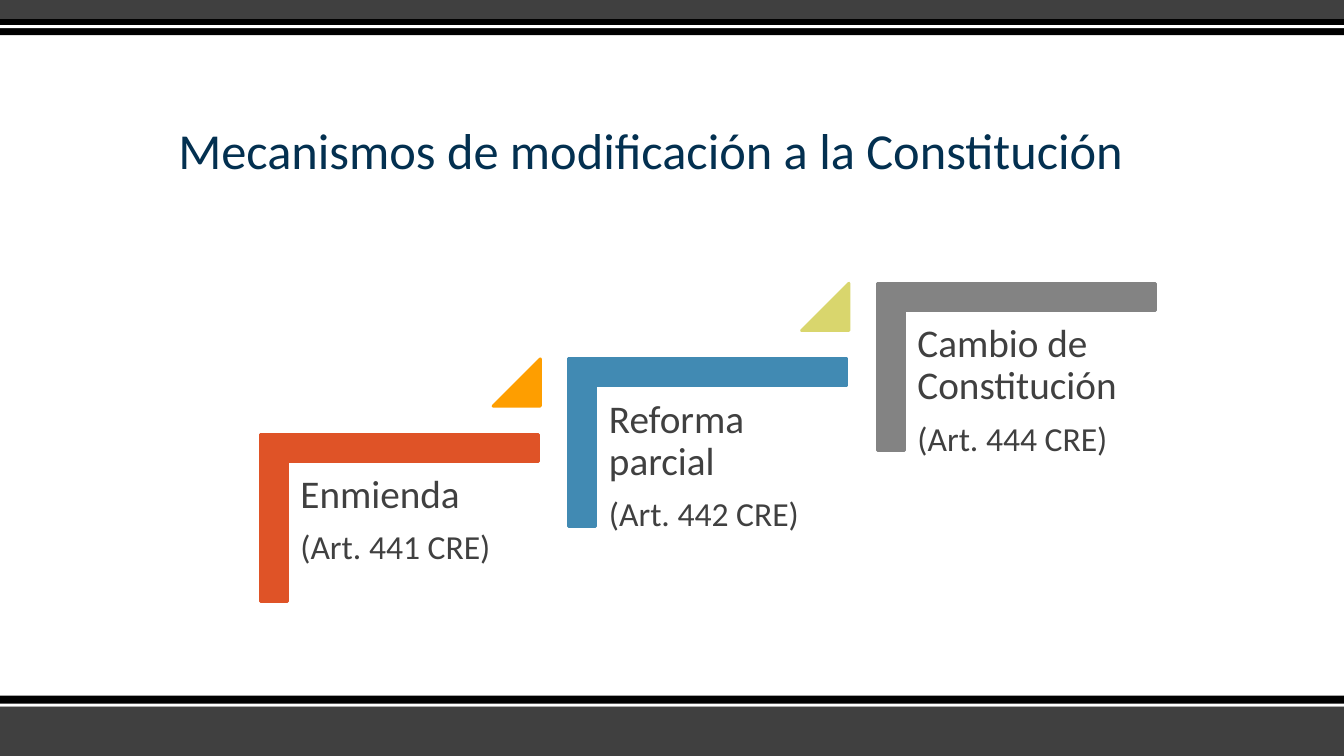
from pptx import Presentation
from pptx.dml.color import RGBColor
from pptx.enum.shapes import MSO_SHAPE as Preset
from pptx.enum.text import MSO_ANCHOR as Anchor
from pptx.util import Inches, Pt

SLIDE_WIDTH, SLIDE_HEIGHT = 13.33, 7.5
BANDS = [
    (7, 0.5, "404040"), (6.9, 0.11, "000000"), (6.98, 0.03, "FFFFFF"),
    (0, 0.19, "404040"), (0.19, 0.16, "000000"), (0.25, 0.03, "FFFFFF"),
]
MECHANISMS = [
    ("Enmienda", "(Art. 441 CRE)", "DF5327", "FE9E00"),
    ("Reforma parcial", "(Art. 442 CRE)", "418AB3", "D9D66D"),
    ("Cambio de Constitución", "(Art. 444 CRE)", "838383", None),
]
FIRST_LEFT, FIRST_TOP = 3.13, 3.76
STEP_RIGHT, STEP_UP = 3.06, 0.75


def color(code):
    """Return the colour of a hex string."""
    return RGBColor.from_string(code)


def apply(target, formats):
    """Set each attribute of the target from a dict of values."""
    for name, value in formats.items():
        setattr(target, name, value)


def add_block(slide, preset, box, fill, outline=0, adjustments=()):
    """Add a filled preset shape, outlined in its own colour if asked."""
    block = slide.shapes.add_shape(preset, *map(Inches, box))
    block.shadow.inherit = False
    block.fill.solid()
    block.fill.fore_color.rgb = color(fill)
    if outline:
        block.line.color.rgb = color(fill)
        block.line.width = Pt(outline)
    else:
        block.line.fill.background()
    for index, value in enumerate(adjustments):
        block.adjustments[index] = value
    return block


def add_text(slide, box, lines, code, frame_formats, space_after=0):
    """Add a wrapped text box with one paragraph per (text, size) line."""
    frame = slide.shapes.add_textbox(*map(Inches, box)).text_frame
    apply(frame, {"word_wrap": True, **frame_formats})
    for index, (text, size) in enumerate(lines):
        paragraph = frame.add_paragraph() if index else frame.paragraphs[0]
        apply(paragraph, {"line_spacing": 0.9, "space_after": Pt(space_after)})
        run = paragraph.add_run()
        run.text = text
        apply(run.font, {"name": "Calibri", "size": Pt(size)})
        run.font.color.rgb = color(code)


def add_step(slide, position, mechanism):
    """Add one stair step: its corner, its text and the triangle above."""
    heading, article, corner_color, triangle_color = mechanism
    left = FIRST_LEFT + position * STEP_RIGHT
    top = FIRST_TOP - position * STEP_UP
    corner = add_block(slide, Preset.CORNER, (left, top, 1.66, 2.76),
                       corner_color, 2, (0.161, 0.161))
    corner.rotation = 90
    margins = dict.fromkeys(
        ("margin_left", "margin_top", "margin_right", "margin_bottom"),
        Inches(0.12))
    add_text(slide, (left - 0.27, top + 0.83, 2.5, 2.19),
             [(heading, 28), (article, 24)], "404040", margins, 9.8)
    if triangle_color:
        add_block(slide, Preset.ISOSCELES_TRIANGLE,
                  (left + 1.76, top - 0.2, 0.47, 0.47),
                  triangle_color, 2, (1,))


def main():
    """Build the slide and save it."""
    deck = Presentation()
    apply(deck, {"slide_width": Inches(SLIDE_WIDTH),
                 "slide_height": Inches(SLIDE_HEIGHT)})
    slide = deck.slides.add_slide(deck.slide_layouts[6])
    for top, height, fill in BANDS:
        add_block(slide, Preset.RECTANGLE, (0, top, SLIDE_WIDTH, height), fill)
    add_text(slide, (1.67, 0.67, 10, 1.17),
             [("Mecanismos de modificación a la Constitución", 36)],
             "033050", {"vertical_anchor": Anchor.BOTTOM})
    for position, mechanism in enumerate(MECHANISMS):
        add_step(slide, position, mechanism)
    deck.save("out.pptx")


if __name__ == "__main__":
    main()
